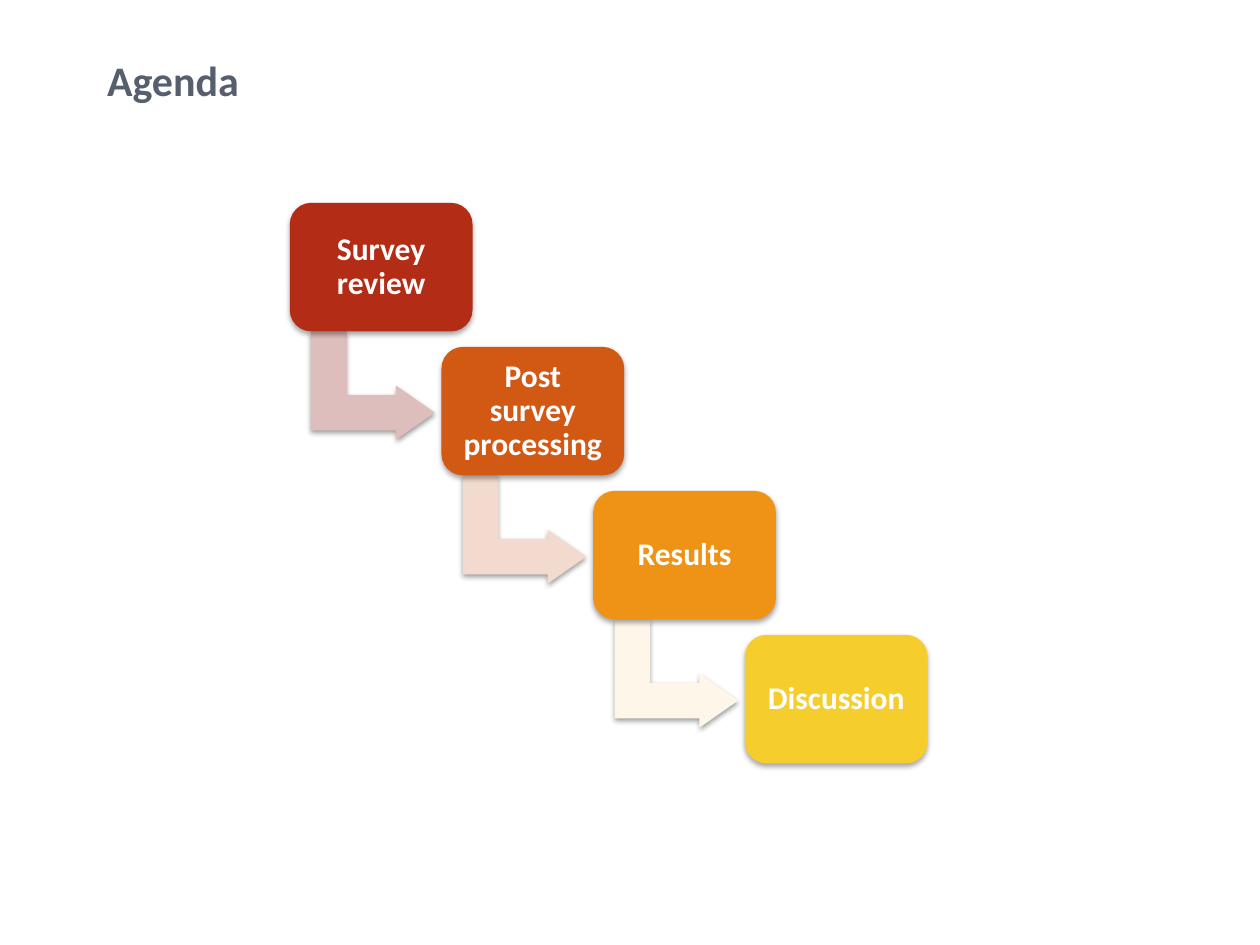
from dataclasses import dataclass
from lxml.etree import SubElement as SubEl
from pptx import Presentation
from pptx.dml.color import RGBColor as RGB
from pptx.enum.shapes import MSO_SHAPE as Shape
from pptx.enum.text import MSO_ANCHOR as Anchor, PP_ALIGN as Align
from pptx.oxml.ns import qn
from pptx.util import Inches, Pt


@dataclass(frozen=True)
class Theme:
    font: str = "Calibri"
    title: str = "575F6D"
    text: str = "FFFFFF"
    shade: str = "000000"
    head: int = 24
    body: int = 18


THEME = Theme()
STEPS = [
    ("Survey review", "B32C16", "DDBEBD"),
    ("Post survey processing", "D25914", "F2DBCE"),
    ("Results", "EE9316", "FDF6E9"),
    ("Discussion", "F5CD2D", None),
]
LEFT, TOP = 2.3, 1.61
STEP_X, STEP_Y = 1.204, 1.143
BOX_W, BOX_H = 1.45, 1.02
ARROW_W, ARROW_H = 0.86, 0.98


def add_run(para, text, size, color):
    run = para.add_run()
    run.text = text
    run.font.name = THEME.font
    run.font.size = Pt(size)
    run.font.bold = True
    run.font.color.rgb = RGB.from_string(color)


def add_shade(shape, dist, alpha):
    shape.shadow.inherit = False
    effects = shape._element.spPr.find(qn("a:effectLst"))
    shade = SubEl(effects, qn("a:outerShdw"), blurRad=str(Pt(3.1)),
                  dist=str(Pt(dist)), dir="5400000", rotWithShape="0")
    color = SubEl(shade, qn("a:srgbClr"), val=THEME.shade)
    SubEl(color, qn("a:alpha"), val=str(alpha * 1000))


def add_form(slide, kind, x, y, w, h, color, adjust):
    shape = slide.shapes.add_shape(
        kind, Inches(x), Inches(y), Inches(w), Inches(h))
    for i, value in enumerate(adjust):
        shape.adjustments[i] = value
    shape.fill.solid()
    shape.fill.fore_color.rgb = RGB.from_string(color)
    shape.line.fill.background()
    return shape


def add_arrow(slide, x, y, color):
    arrow = add_form(slide, Shape.BENT_UP_ARROW, x, y, ARROW_W, ARROW_H,
                     color, (0.328, 0.25, 0.358))
    arrow.rotation = 90
    add_shade(arrow, 1.6, 38)


def add_box(slide, x, y, text, color):
    box = add_form(slide, Shape.ROUNDED_RECTANGLE, x, y, BOX_W, BOX_H,
                   color, (0.167,))
    add_shade(box, 1.8, 35)
    frame = box.text_frame
    frame.word_wrap = True
    frame.vertical_anchor = Anchor.MIDDLE
    frame.margin_left = frame.margin_right = Inches(0.12)
    frame.margin_top = frame.margin_bottom = Inches(0.07)
    para = frame.paragraphs[0]
    para.alignment = Align.CENTER
    para.line_spacing = 0.9
    add_run(para, text, THEME.body, THEME.text)


def add_title(slide, text):
    title = slide.shapes.title
    title.left, title.top = Inches(0.75), Inches(0.17)
    title.width, title.height = Inches(9), Inches(0.92)
    title.text_frame.vertical_anchor = Anchor.MIDDLE
    para = title.text_frame.paragraphs[0]
    para.alignment = Align.LEFT
    add_run(para, text, THEME.head, THEME.title)


def main():
    deck = Presentation()
    deck.slide_width, deck.slide_height = Inches(10), Inches(7.5)
    slide = deck.slides.add_slide(deck.slide_layouts[5])
    add_title(slide, "Agenda")
    for i, (text, color, tint) in enumerate(STEPS):
        x, y = LEFT + i * STEP_X, TOP + i * STEP_Y
        if tint:
            add_arrow(slide, x + 0.23, y + 0.96, tint)
        add_box(slide, x, y, text, color)
    deck.save("out.pptx")


if __name__ == "__main__":
    main()
